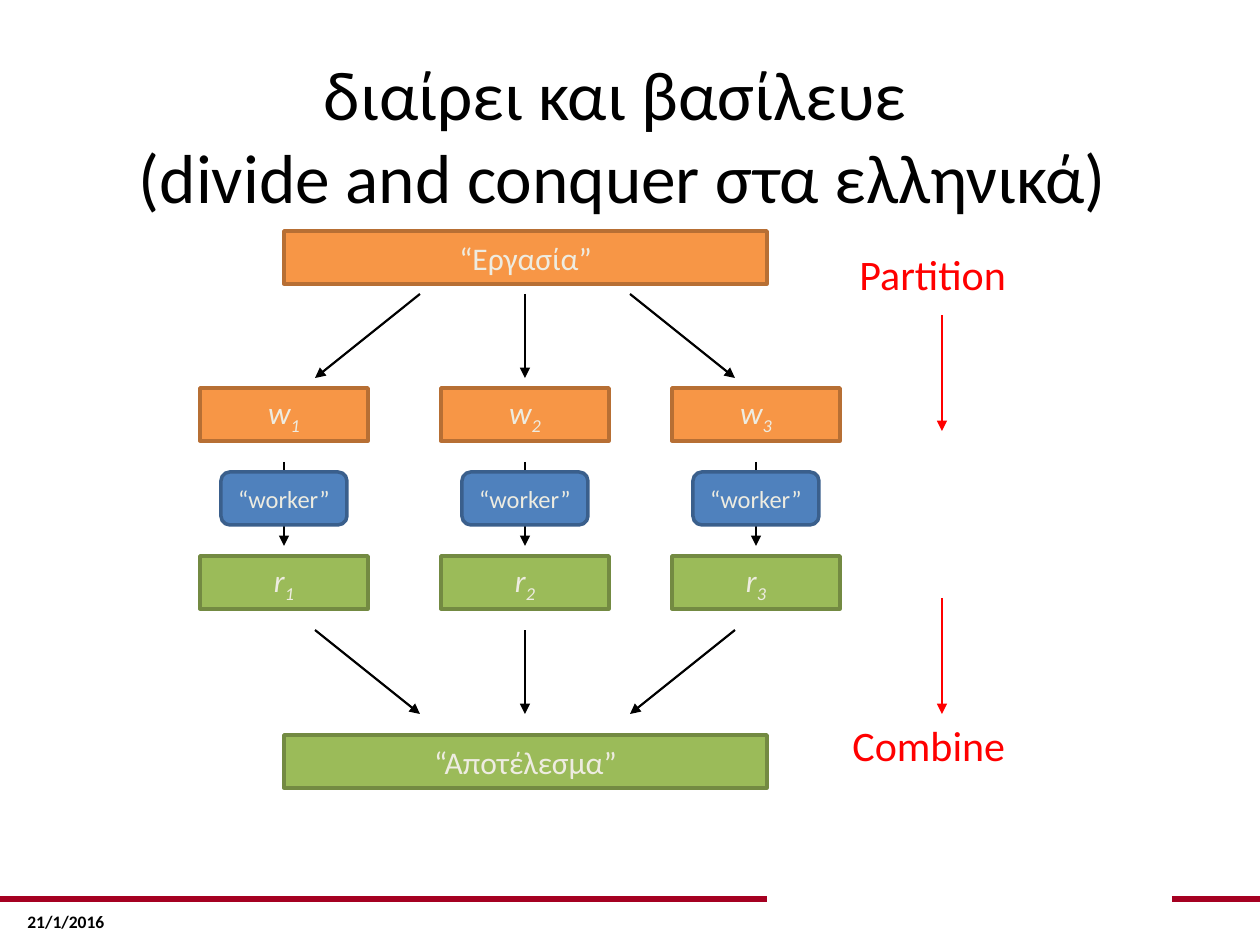
"""Build the divide-and-conquer slide."""
from dataclasses import dataclass

from lxml import etree
from pptx import Presentation
from pptx import util as u
from pptx.dml.color import RGBColor
from pptx.enum import shapes, text
from pptx.oxml.ns import qn

SCALE = 914400 / 126
FONT = "Calibri"
BLACK, RED, CREAM, RULE = "000000", "FF0000", "EEECE1", "A50021"
MIDS = (284, 525, 756)
HIGH = 53


@dataclass(frozen=True)
class Look:
    """Fill, outline and preset of a box."""
    fill: str
    edge: str
    kind: shapes.MSO_SHAPE = shapes.MSO_SHAPE.RECTANGLE


@dataclass(frozen=True)
class Label:
    """A free text with its place and font."""
    words: str
    left: int
    top: int
    width: int
    height: int
    size: float
    color: str
    bold: bool = False
    wrap: bool = False
    title: bool = False


@dataclass(frozen=True)
class Line:
    """A straight line, with or without an arrowhead."""
    start: tuple[int, int]
    end: tuple[int, int]
    color: str = BLACK
    width: float = 1.25
    head: bool = True


TASK = Look("F79646", "B76F34")
RESULT = Look("9BBB59", "738A42")
WORKER = Look("4F81BD", "3A5F8C", shapes.MSO_SHAPE.ROUNDED_RECTANGLE)

LABELS = (
    Label("21/1/2016", 15, 905, 139, 40, 10, BLACK, bold=True, wrap=True),
    Label("διαίρει και βασίλευε\v (divide and conquer στα ελληνικά)",
          44, 55, 1142, 158, 39.6, BLACK, wrap=True, title=True),
    Label("Partition", 847, 242, 198, 64, 24, RED),
    Label("Combine", 840, 713, 207, 64, 24, RED),
)
RULES = (
    Line((1172, 899), (1260, 899), RULE, 3, False),
    Line((0, 899), (767, 899), RULE, 3, False),
)
ARROWS = (
    *(Line((a, 294), (b, 378)) for a, b in ((420, 315), (525, 525), (630, 735))),
    *(Line((mid, 462), (mid, 546)) for mid in MIDS),
    *(Line((a, 630), (b, 714)) for a, b in ((315, 420), (525, 525), (735, 630))),
    *(Line((942, top), (942, top + 116), RED, 1.5) for top in (315, 598)),
)


def px(n: int) -> int:
    """Turn px into EMU."""
    return round(n * SCALE)


def rgb(code: str) -> RGBColor:
    """Turn a hex string into a colour."""
    return RGBColor.from_string(code)


def style(para, size: float, color: str) -> None:
    """Set the font of a paragraph."""
    para.font.name = FONT
    para.font.size = u.Pt(size)
    para.font.color.rgb = rgb(color)


def draw_line(slide, line: Line) -> None:
    """Draw a line."""
    ends = (px(n) for n in (*line.start, *line.end))
    shape = slide.shapes.add_connector(shapes.MSO_CONNECTOR.STRAIGHT, *ends)
    shape.line.color.rgb = rgb(line.color)
    shape.line.width = u.Pt(line.width)
    if line.head:
        etree.SubElement(shape.line._get_or_add_ln(), qn("a:tailEnd"), type="triangle")
    etree.SubElement(shape._element.spPr, qn("a:effectLst"))


def draw_box(slide, look: Look, mid: int, top: int, width: int, words: str,
             size: int = 18, sub: str = "") -> None:
    """Draw a box centred on mid, with an italic symbol if sub is given."""
    shape = slide.shapes.add_shape(
        look.kind, px(mid - width // 2), px(top), px(width), px(HIGH))
    shape.shadow.inherit = False
    shape.fill.solid()
    shape.fill.fore_color.rgb = rgb(look.fill)
    shape.line.color.rgb = rgb(look.edge)
    shape.line.width = u.Pt(2)
    frame = shape.text_frame
    frame.vertical_anchor = text.MSO_ANCHOR.MIDDLE
    para = frame.paragraphs[0]
    para.alignment = text.PP_ALIGN.CENTER
    para.add_run().text = words
    if sub:
        run = para.add_run()
        run.text = sub
        run._r.get_or_add_rPr().set("baseline", "-25000")
        para.font.italic = True
    style(para, size, CREAM)


def draw_label(slide, label: Label) -> None:
    """Draw a free text."""
    area = (px(n) for n in (label.left, label.top, label.width, label.height))
    frame = slide.shapes.add_textbox(*area).text_frame
    frame.word_wrap = label.wrap
    para = frame.paragraphs[0]
    para.text = label.words
    if label.title:
        frame.vertical_anchor = text.MSO_ANCHOR.MIDDLE
        para.alignment = text.PP_ALIGN.CENTER
    style(para, label.size, label.color)
    para.font.bold = label.bold


def main() -> None:
    """Build and save the slide."""
    deck = Presentation()
    deck.slide_width, deck.slide_height = px(1260), px(945)
    slide = deck.slides.add_slide(deck.slide_layouts[6])
    for line in RULES + ARROWS:
        draw_line(slide, line)
    for label in LABELS:
        draw_label(slide, label)
    draw_box(slide, TASK, 525, 231, 483, "“Εργασία”")
    for num, mid in enumerate(MIDS, 1):
        draw_box(slide, TASK, mid, 388, 168, "w", sub=str(num))
        draw_box(slide, WORKER, mid, 472, 126, "“worker”", size=14)
        draw_box(slide, RESULT, mid, 556, 168, "r", sub=str(num))
    draw_box(slide, RESULT, 525, 735, 483, "“Αποτέλεσμα”")
    deck.save("out.pptx")


if __name__ == "__main__":
    main()
